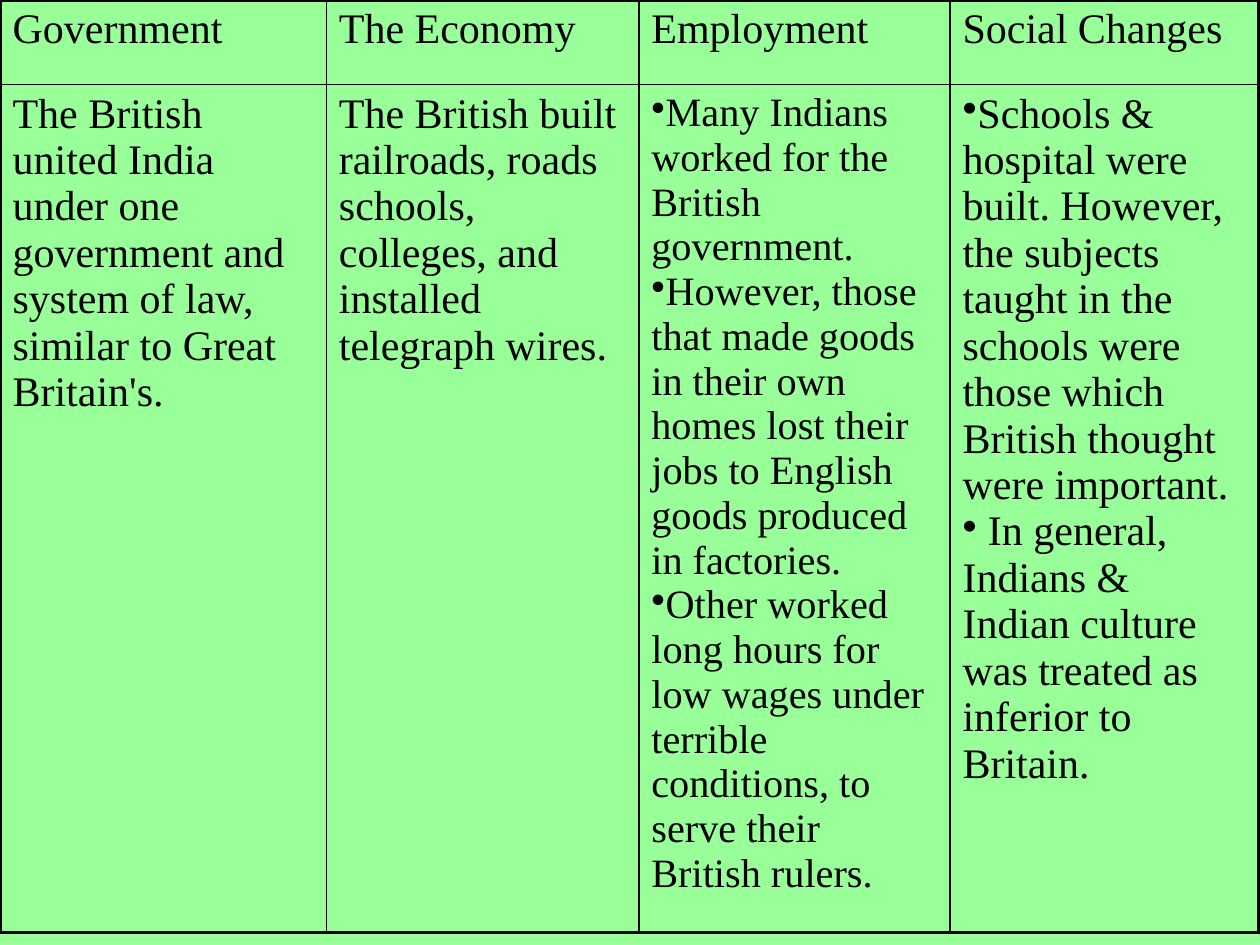
from lxml import etree
from pptx import Presentation
from pptx import util as u
from pptx.dml.color import RGBColor
from pptx.oxml.ns import qn

BLACK = RGBColor(0x00, 0x00, 0x00)
LIGHT_GREEN = RGBColor(0x99, 0xFF, 0x99)
FONT = "Times New Roman"
COLUMN_WIDTHS = (2.59, 2.48, 2.47, 2.45)
ROW_HEIGHTS = (0.67, 6.73)

TOPICS = [
    ("Government", 24, False, [
        "The British united India under one government and system of law, "
        "similar to Great Britain's."]),
    ("The Economy", 24, False, [
        "The British built railroads, roads schools, colleges, and installed "
        "telegraph wires."]),
    ("Employment", 23, True, [
        "Many Indians worked for the British government.",
        "However, those that made goods in their own homes lost their jobs to "
        "English goods produced in factories.",
        "Other worked long hours for low wages under terrible conditions, to "
        "serve their British rulers."]),
    ("Social Changes", 24, True, [
        "Schools & hospital were built. However, the subjects taught in the "
        "schools were those which British thought were important.",
        " In general, Indians & Indian culture was treated as inferior to "
        "Britain."]),
]


def add_bullet(paragraph):
    properties = paragraph._p.get_or_add_pPr()
    properties.set("marL", "0")
    properties.set("indent", "0")
    etree.SubElement(properties, qn("a:buChar"), char="•")


def write_cell(cell, lines, size, bulleted=False):
    frame = cell.text_frame
    frame.text = "\n".join(lines)
    formats = {"name": FONT, "size": u.Pt(size), "bold": False}
    for paragraph in frame.paragraphs:
        if bulleted:
            add_bullet(paragraph)
        font = paragraph.runs[0].font
        for attribute, value in formats.items():
            setattr(font, attribute, value)
        font.color.rgb = BLACK


def set_borders(cell, outer_sides):
    properties = cell._tc.get_or_add_tcPr()
    for side in ("L", "R", "T", "B"):
        width = u.Pt(2 if side in outer_sides else 1)
        line = etree.SubElement(properties, qn(f"a:ln{side}"), w=str(width))
        fill = etree.SubElement(line, qn("a:solidFill"))
        etree.SubElement(fill, qn("a:srgbClr"), val=str(BLACK))
    cell.fill.background()


def add_topic_table(slide, left, top, width, height):
    table = slide.shapes.add_table(
        len(ROW_HEIGHTS), len(TOPICS), left, top, width, height).table
    for attribute in ("first_row", "horz_banding"):
        setattr(table, attribute, False)
    for row, row_height in zip(table.rows, ROW_HEIGHTS):
        row.height = u.Inches(row_height)
    last = len(TOPICS) - 1
    for index, (heading, size, bulleted, lines) in enumerate(TOPICS):
        table.columns[index].width = u.Inches(COLUMN_WIDTHS[index])
        header, body = table.cell(0, index), table.cell(1, index)
        write_cell(header, [heading], 24)
        write_cell(body, lines, size, bulleted)
        edge = {0: "L", last: "R"}.get(index, "")
        set_borders(header, "T" + edge)
        set_borders(body, "B" + edge)


def main():
    presentation = Presentation()
    presentation.slide_width = u.Inches(10)
    presentation.slide_height = u.Inches(7.5)
    slide = presentation.slides.add_slide(presentation.slide_layouts[6])
    background = slide.background.fill
    background.solid()
    background.fore_color.rgb = LIGHT_GREEN
    add_topic_table(slide, u.Inches(0), u.Inches(0),
                    u.Inches(sum(COLUMN_WIDTHS)), u.Inches(sum(ROW_HEIGHTS)))
    presentation.save("out.pptx")


if __name__ == "__main__":
    main()
